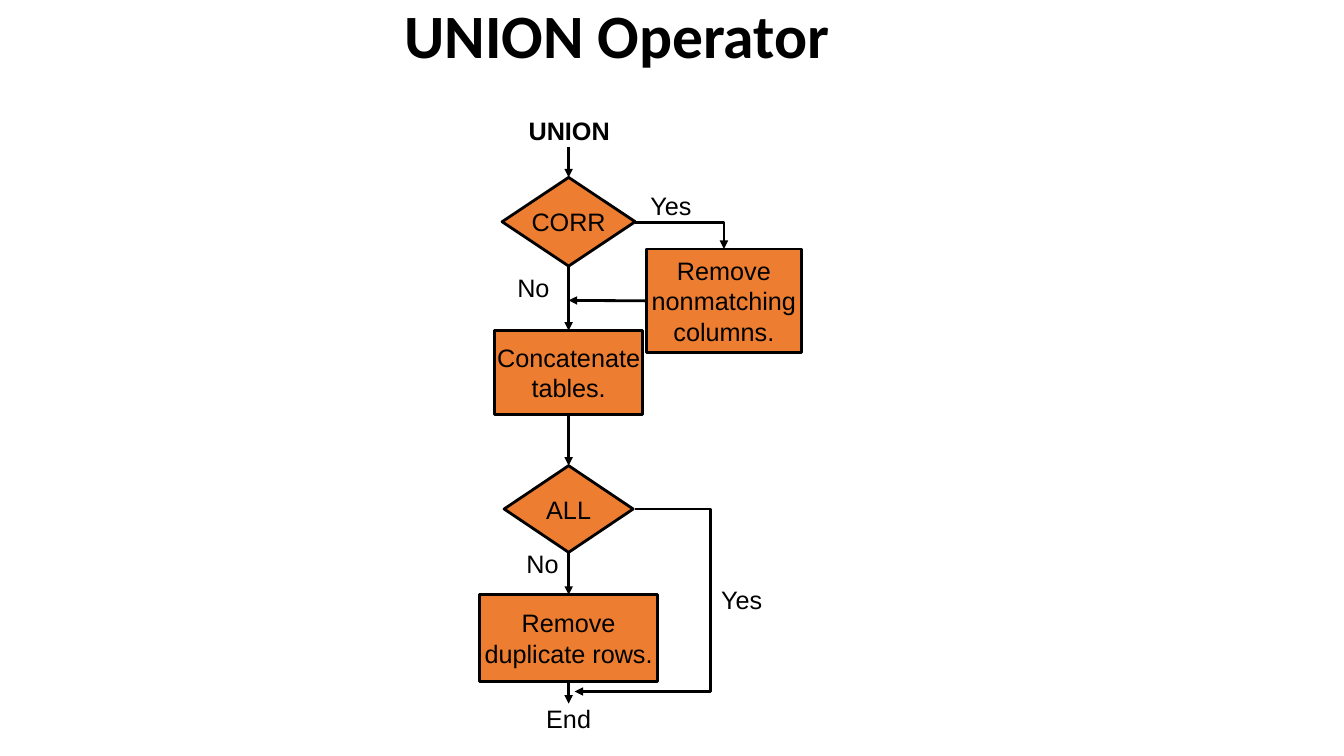
from dataclasses import dataclass

from lxml import etree
from pptx import Presentation
from pptx.dml.color import RGBColor
from pptx.enum.shapes import MSO_CONNECTOR, MSO_SHAPE
from pptx.enum.text import MSO_ANCHOR, MSO_AUTO_SIZE, PP_ALIGN
from pptx.oxml.ns import qn
from pptx.util import Inches, Pt

STRAIGHT, ELBOW = MSO_CONNECTOR.STRAIGHT, MSO_CONNECTOR.ELBOW
DECISION, PROCESS = MSO_SHAPE.FLOWCHART_DECISION, MSO_SHAPE.FLOWCHART_PROCESS
RECTANGLE = MSO_SHAPE.RECTANGLE
CENTER, LEFT = PP_ALIGN.CENTER, PP_ALIGN.LEFT
TOP, MIDDLE = MSO_ANCHOR.TOP, MSO_ANCHOR.MIDDLE
NO_FIT = MSO_AUTO_SIZE.NONE
SITE_TOP, SITE_LEFT, SITE_BOTTOM = 0, 1, 2

BLACK, ORANGE = "000000", "ED7D31"
FLOW_X = 5.64  # centre line of the main flow


@dataclass(frozen=True)
class Step:
    kind: int
    lines: tuple[str, ...]
    center_x: float
    top: float
    width: float
    height: float
    inset_x: float = 0
    inset_y: float = 0
    wrap: bool = False


@dataclass(frozen=True)
class Label:
    text: str
    left: float
    top: float
    width: float
    height: float = 0.3
    inset_x: float = 0
    inset_y: float = 0
    bold: bool = False


@dataclass(frozen=True)
class Arrow:
    start: tuple[float, float]
    end: tuple[float, float]
    source: str = ""
    source_site: int = SITE_BOTTOM
    target: str = ""


STEPS = {
    "corr": Step(DECISION, ("CORR",), FLOW_X, 1.76, 1.32, 0.88),
    "all": Step(DECISION, ("ALL",), FLOW_X, 4.62, 1.28, 0.86),
    "duplicates": Step(RECTANGLE, ("Remove", "duplicate rows."), FLOW_X, 5.9, 1.76, 0.86),
    "concatenate": Step(PROCESS, ("Concatenate", "tables."), FLOW_X, 3.28, 1.47, 0.83, 0.01, 0.1),
    "columns": Step(RECTANGLE, ("Remove nonmatching", "columns."), 7.18, 2.47, 1.54, 1.03,
                    0, 0.05, wrap=True),
}

LABELS = [
    Label("UNION", 5.24, 1.14, 0.81, bold=True),
    Label("Yes", 6.34, 1.84, 0.63, 0.4, 0.1, 0.05),
    Label("No", 5.03, 2.65, 0.52, 0.4, 0.1, 0.05),
    Label("No", 5.12, 5.39, 0.52, 0.4, 0.1, 0.05),
    Label("Yes", 7.15, 5.8, 0.41),
    Label("End", 5.42, 6.98, 0.44),
]

ARROWS = [
    Arrow((FLOW_X, 1.46), (FLOW_X, 1.76), target="corr"),
    Arrow((FLOW_X, 2.64), (FLOW_X, 3.28), "corr", target="concatenate"),
    Arrow((FLOW_X, 4.11), (FLOW_X, 4.62), "concatenate", target="all"),
    Arrow((FLOW_X, 5.48), (FLOW_X, 5.9), "all", target="duplicates"),
    Arrow((FLOW_X, 6.76), (FLOW_X, 6.98), "duplicates"),
    Arrow((6.41, 2.98), (FLOW_X, 2.98), "columns", SITE_LEFT),
]


def rgb(color: str) -> RGBColor:
    return RGBColor.from_string(color)


def write(frame, lines: tuple[str, ...], size: float = 18, font: str = "Arial",
          bold: bool = False, align=CENTER) -> None:
    paragraph = frame.paragraphs[0]
    paragraph.alignment = align
    for index, line in enumerate(lines):
        if index:
            paragraph.add_line_break()
        run = paragraph.add_run()
        run.text = line
        run.font.size = Pt(size)
        run.font.name = font
        run.font.bold = bold
        run.font.color.rgb = rgb(BLACK)


def set_frame(frame, inset_x: float, inset_y: float, wrap: bool, anchor) -> None:
    frame.margin_left = frame.margin_right = Inches(inset_x)
    frame.margin_top = frame.margin_bottom = Inches(inset_y)
    frame.word_wrap = wrap
    frame.vertical_anchor = anchor
    frame.auto_size = NO_FIT


def add_step(slide, step: Step):
    shape = slide.shapes.add_shape(
        step.kind, Inches(step.center_x - step.width / 2), Inches(step.top),
        Inches(step.width), Inches(step.height))
    shape.shadow.inherit = False
    shape.fill.solid()
    shape.fill.fore_color.rgb = rgb(ORANGE)
    shape.line.color.rgb = rgb(BLACK)
    shape.line.width = Pt(2)
    set_frame(shape.text_frame, step.inset_x, step.inset_y, step.wrap, MIDDLE)
    write(shape.text_frame, step.lines)
    return shape


def add_label(slide, label: Label) -> None:
    box = slide.shapes.add_textbox(Inches(label.left), Inches(label.top),
                                   Inches(label.width), Inches(label.height))
    set_frame(box.text_frame, label.inset_x, label.inset_y, False, TOP)
    write(box.text_frame, (label.text,), bold=label.bold)


def add_arrow(slide, kind, start: tuple[float, float], end: tuple[float, float]):
    connector = slide.shapes.add_connector(kind, *map(Inches, start + end))
    connector.line.color.rgb = rgb(BLACK)
    connector.line.width = Pt(2)
    etree.SubElement(connector.line._get_or_add_ln(), qn("a:tailEnd"), type="triangle")
    etree.SubElement(connector._element.spPr, qn("a:effectLst"))
    return connector


def set_bend(connector, preset: str, adjustment: int | None = None) -> None:
    geometry = connector._element.spPr.find(qn("a:prstGeom"))
    geometry.set("prst", preset)
    if adjustment is not None:
        guides = geometry.find(qn("a:avLst"))
        etree.SubElement(guides, qn("a:gd"), name="adj1", fmla=f"val {adjustment}")


def add_title(slide) -> None:
    title = slide.shapes.title
    title.left, title.top = Inches(3.91), Inches(0)
    title.width, title.height = Inches(4.9), Inches(1.45)
    set_frame(title.text_frame, 0.1, 0.05, True, TOP)
    write(title.text_frame, ("UNION Operator",), 44, "Calibri", True, LEFT)
    title.text_frame.paragraphs[0].line_spacing = 0.9


def main() -> None:
    deck = Presentation()
    deck.slide_width, deck.slide_height = Inches(13.33), Inches(7.5)
    slide = deck.slides.add_slide(deck.slide_layouts[5])
    add_title(slide)

    # Decisions and actions
    steps = {name: add_step(slide, step) for name, step in STEPS.items()}

    # Straight arrows, joined to the steps they touch
    for arrow in ARROWS:
        connector = add_arrow(slide, STRAIGHT, arrow.start, arrow.end)
        if arrow.source:
            connector.begin_connect(steps[arrow.source], arrow.source_site)
        if arrow.target:
            connector.end_connect(steps[arrow.target], SITE_TOP)

    # "Yes" branches
    corr_yes = add_arrow(slide, ELBOW, (6.3, 2.21), (7.18, 2.47))
    set_bend(corr_yes, "bentConnector2")
    all_yes = add_arrow(slide, ELBOW, (6.3, 5.05), (5.7, 6.86))
    set_bend(all_yes, "bentConnector3", -124100)

    # Branch names and end points
    for label in LABELS:
        add_label(slide, label)

    deck.save("out.pptx")


if __name__ == "__main__":
    main()
